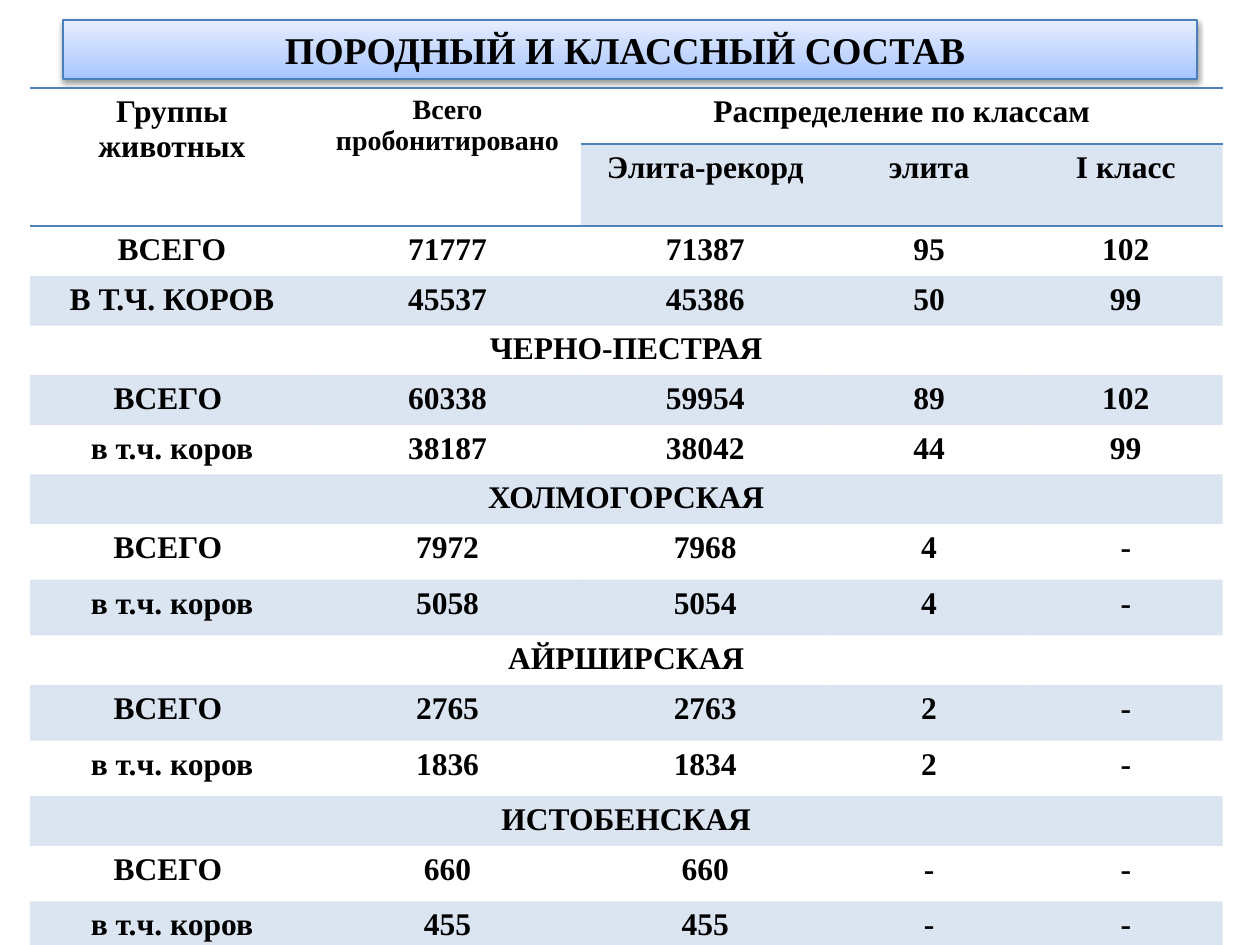
from pptx import Presentation
from pptx.dml.color import RGBColor
from pptx.enum.text import MSO_ANCHOR, MSO_AUTO_SIZE, PP_ALIGN
from pptx.oxml import parse_xml
from pptx.oxml.ns import nsdecls
from pptx.util import Pt

CENTER = PP_ALIGN.CENTER
MIDDLE = MSO_ANCHOR.MIDDLE
NO_FIT = MSO_AUTO_SIZE.NONE
PLAIN = "{2D5ABB26-0587-4C30-8999-92F81FD0307C}"
NS = nsdecls("a")

COLS = [162.5, 152.5, 142.1, 113.8, 110.9]
LOW, HIGH = 28.4, 31.8
TALL = {0, 8, 9, 11, 12, 14, 15}
HEAD = [
    ["Группы животных", "Всего пробонитировано", "Распределение по классам"],
    ["", "", "Элита-рекорд", "элита", "I класс"],
]
HERDS = [
    ["ВСЕГО", "71777", "71387", "95", "102"],
    ["В Т.Ч. КОРОВ", "45537", "45386", "50", "99"],
    ["ЧЕРНО-ПЕСТРАЯ"],
    ["ВСЕГО ", "60338", "59954", "89", "102"],
    ["в т.ч. коров", "38187", "38042", "44", "99"],
    ["ХОЛМОГОРСКАЯ"],
    ["ВСЕГО ", "7972", "7968", "4", "-"],
    ["в т.ч. коров", "5058", "5054", "4", "-"],
    ["АЙРШИРСКАЯ"],
    ["ВСЕГО ", "2765", "2763", "2", "-"],
    ["в т.ч. коров", "1836", "1834", "2", "-"],
    ["ИСТОБЕНСКАЯ"],
    ["ВСЕГО ", "660", "660", "-", "-"],
    ["в т.ч. коров", "455", "455", "-", "-"],
]


def color(code):
    return RGBColor.from_string(code)


class Deck:
    font = "Times New Roman"
    ink = "000000"
    blue = "4F81BD"

    def __init__(self, wide, high):
        self.prs = Presentation()
        self.prs.slide_width, self.prs.slide_height = Pt(wide), Pt(high)
        self.slide = self.prs.slides.add_slide(self.prs.slide_layouts[5])

    def label(self, frame, text, size):
        frame.text = text
        par = frame.paragraphs[0]
        par.alignment = CENTER
        par.font.name, par.font.size, par.font.bold = self.font, Pt(size), True
        par.font.color.rgb = color(self.ink)

    def title(self, text, left, top, wide, high):
        box = self.slide.shapes.title
        box.left, box.top = Pt(left), Pt(top)
        box.width, box.height = Pt(wide), Pt(high)
        self.label(box.text_frame, text, 21.6)
        box.text_frame.auto_size = NO_FIT
        box.text_frame.vertical_anchor = MIDDLE
        # Gradient, outline and soft shadow, in schema order
        stops = [(0, "A4C4FF"), (35, "BFD4FF"), (100, "E6EEFF")]
        marks = "".join(f'<a:gs pos="{pos * 1000}"><a:srgbClr val="{tone}"/></a:gs>'
                        for pos, tone in stops)
        props = box.element.spPr
        props.append(parse_xml(
            f'<a:gradFill {NS} rotWithShape="1"><a:gsLst>{marks}</a:gsLst>'
            '<a:lin ang="16200000" scaled="0"/></a:gradFill>'))
        box.line.color.rgb, box.line.width = color("4B7EBC"), Pt(0.75)
        props.append(parse_xml(
            f'<a:effectLst {NS}><a:outerShdw blurRad="{Pt(3.1)}" dist="{Pt(1.6)}" '
            'dir="5400000" rotWithShape="0"><a:srgbClr val="000000">'
            '<a:alpha val="38000"/></a:srgbClr></a:outerShdw></a:effectLst>'))

    def table(self, left, top, cols, rows):
        grid = self.slide.shapes.add_table(
            len(rows), len(cols), Pt(left), Pt(top), Pt(sum(cols)), Pt(sum(rows))).table
        grid._tbl.tblPr.find("{*}tableStyleId").text = PLAIN
        for col, wide in zip(grid.columns, cols):
            col.width = Pt(wide)
        for row, high in zip(grid.rows, rows):
            row.height = Pt(high)
        return grid

    def edge(self, cell, side):
        cell._tc.get_or_add_tcPr().append(parse_xml(
            f'<a:ln{side} {NS} w="{Pt(1)}"><a:solidFill><a:srgbClr val="{self.blue}"/>'
            f'</a:solidFill></a:ln{side}>'))

    def band(self, cell, shade):
        if not shade:
            cell.fill.background()
            return
        cell.fill.solid()
        cell.fill.fore_color.rgb = color(self.blue)
        tone = cell._tc.tcPr.find("{*}solidFill/{*}srgbClr")
        tone.append(parse_xml(f'<a:alpha {NS} val="20000"/>'))


def main():
    deck = Deck(720, 540)
    deck.title("ПОРОДНЫЙ И КЛАССНЫЙ СОСТАВ ", 36, 11.4, 648, 33.8)

    # Grid and merged cells
    data = HEAD + HERDS
    last = len(data) - 1
    rows = [HIGH if r in TALL else LOW for r in range(len(data))]
    grid = deck.table(17, 50.4, COLS, rows)
    for c in (0, 1):
        grid.cell(0, c).merge(grid.cell(1, c))
    grid.cell(0, 2).merge(grid.cell(0, 4))
    for r, line in enumerate(data):
        if len(line) == 1:
            grid.cell(r, 0).merge(grid.cell(r, 4))

    # Text, rules and bands
    for r, line in enumerate(data):
        for c in range(len(COLS)):
            cell = grid.cell(r, c)
            if c < len(line) and line[c]:
                deck.label(cell.text_frame, line[c], 16 if (r, c) == (0, 1) else 18)
            if r == 0 or (r == 1 and c > 1):
                deck.edge(cell, "T")
            if r in (0, last) or (r == 1 and c < 2):
                deck.edge(cell, "B")
            deck.band(cell, r % 2 and not (r == 1 and c < 2))

    deck.prs.save("out.pptx")


if __name__ == "__main__":
    main()
